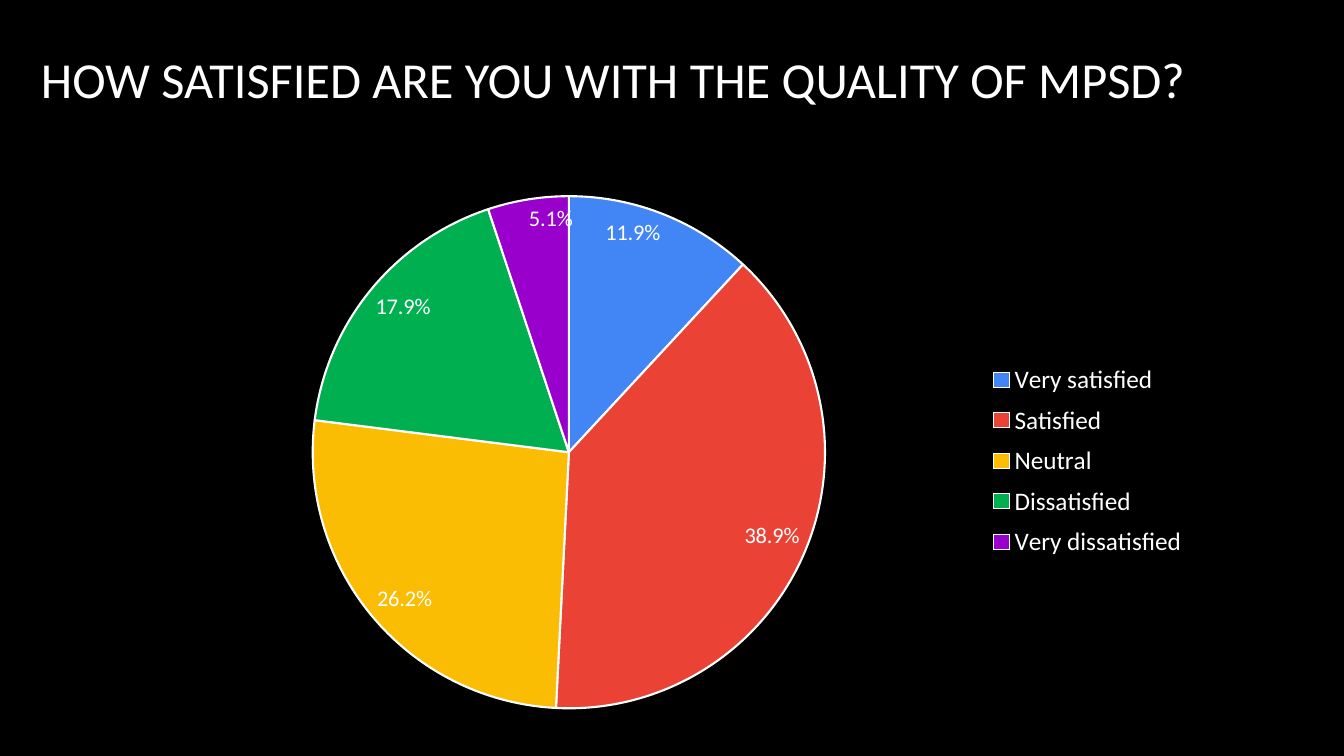
from dataclasses import dataclass

from lxml.etree import SubElement
from pptx import Presentation
from pptx.chart.data import CategoryChartData
from pptx.dml.color import RGBColor
from pptx.enum.chart import XL_CHART_TYPE, XL_LABEL_POSITION, XL_LEGEND_POSITION
from pptx.enum.text import MSO_ANCHOR
from pptx.oxml.ns import qn
from pptx.util import Inches, Pt


@dataclass(frozen=True)
class Theme:
    font: str = "Calibri"
    background: str = "000000"
    ink: str = "FFFFFF"
    title_size: int = 36
    legend_size: int = 18
    label_size: int = 16
    outline: float = 1.5


THEME = Theme()
WIDTH, HEIGHT = 13.33, 7.5

# Answer, percentage, slice colour
ANSWERS = [
    ("Very satisfied", 11.9, "4285F4"),
    ("Satisfied", 38.9, "EA4335"),
    ("Neutral", 26.2, "FBBC04"),
    ("Dissatisfied", 17.9, "00B050"),
    ("Very dissatisfied", 5.1, "9900CC"),
]


def frame(left, top, width, height):
    """Turn shares of the slide into lengths."""
    return (Inches(left * WIDTH), Inches(top * HEIGHT),
            Inches(width * WIDTH), Inches(height * HEIGHT))


def style_font(font, size):
    font.name = THEME.font
    font.size = Pt(size)
    font.color.rgb = RGBColor.from_string(THEME.ink)


def place_in_chart(element, index, shares, inner=False):
    """Fix a chart part at left, top, width, height as shares of the chart."""
    for existing in element.findall(qn("c:layout")):
        element.remove(existing)
    layout = SubElement(element, qn("c:layout"))
    element.insert(index, layout)
    manual = SubElement(layout, qn("c:manualLayout"))
    settings = [("layoutTarget", "inner")] if inner else []
    settings += [("xMode", "edge"), ("yMode", "edge")]
    settings += zip("xywh", shares)
    for name, value in settings:
        SubElement(manual, qn(f"c:{name}")).set("val", str(value))


def add_title(page, text, area):
    box = page.shapes.add_textbox(*frame(*area))
    text_frame = box.text_frame
    text_frame.word_wrap = True
    text_frame.vertical_anchor = MSO_ANCHOR.MIDDLE
    text_frame.text = text
    style_font(text_frame.paragraphs[0].runs[0].font, THEME.title_size)


def add_pie(page, answers, area):
    data = CategoryChartData()
    data.categories = [name for name, _, _ in answers]
    data.add_series("Series 1", [value for _, value, _ in answers])
    chart = page.shapes.add_chart(XL_CHART_TYPE.PIE, *frame(*area), data).chart
    chart.has_title = False
    style_font(chart.font, THEME.label_size)

    # Slices
    plot = chart.plots[0]
    plot.vary_by_categories = True
    for index, (_, _, colour) in enumerate(answers):
        piece = plot.series[0].points[index].format
        piece.fill.solid()
        piece.fill.fore_color.rgb = RGBColor.from_string(colour)
        piece.line.color.rgb = RGBColor.from_string(THEME.ink)
        piece.line.width = Pt(THEME.outline)

    # Percentages
    labels = plot.series[0].data_labels
    labels.show_percentage = True
    labels.show_value = False
    labels.number_format = "0.0%"
    labels.number_format_is_linked = False
    labels.position = XL_LABEL_POSITION.INSIDE_END
    style_font(labels.font, THEME.label_size)

    # Legend
    chart.has_legend = True
    legend = chart.legend
    legend.position = XL_LEGEND_POSITION.RIGHT
    legend.include_in_layout = False
    style_font(legend.font, THEME.legend_size)

    plot_area = chart.element.chart.plotArea if hasattr(chart, "element") \
        else chart._chartSpace.chart.plotArea
    place_in_chart(plot_area, 0, (0.22, 0.08, 0.4, 0.9), inner=True)
    place_in_chart(legend._element, 1, (0.74, 0.36, 0.17, 0.37))


def main():
    deck = Presentation()
    deck.slide_width, deck.slide_height = Inches(WIDTH), Inches(HEIGHT)
    page = deck.slides.add_slide(deck.slide_layouts[6])
    page.background.fill.solid()
    page.background.fill.fore_color.rgb = RGBColor.from_string(THEME.background)

    add_title(page, "HOW SATISFIED ARE YOU WITH THE QUALITY OF MPSD?",
              (0.023, 0.045, 0.926, 0.117))
    add_pie(page, ANSWERS, (0.023, 0.196, 0.953, 0.759))
    deck.save("out.pptx")


if __name__ == "__main__":
    main()
